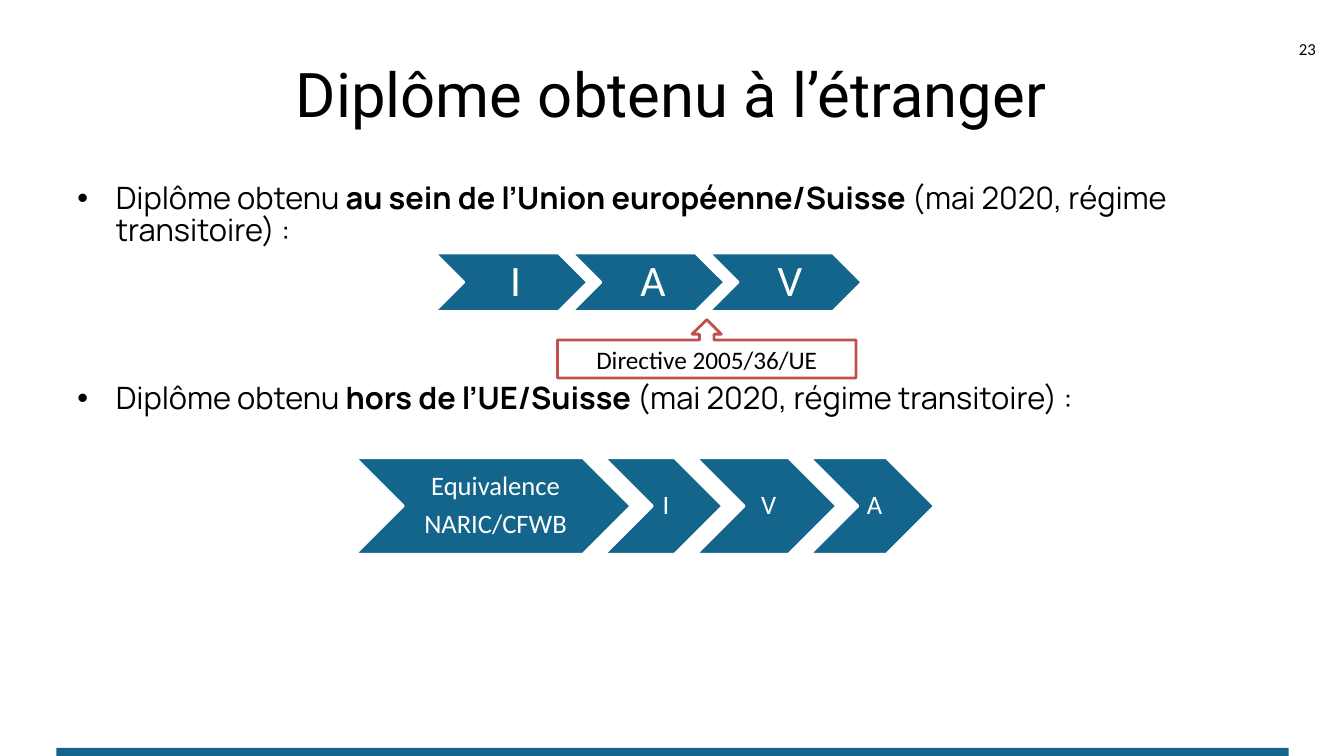
from pptx import Presentation
from pptx.dml.color import RGBColor
from pptx.enum import shapes, text
from pptx.oxml import parse_xml
from pptx.oxml.ns import nsdecls
from pptx.util import Inches, Pt

BLUE, RED, WHITE, BLACK = "14658C", "C0504D", "FFFFFF", "000000"
KIND = shapes.MSO_SHAPE
ALIGN = text.PP_ALIGN
MID = text.MSO_ANCHOR.MIDDLE


def color(code):
    return RGBColor.from_string(code)


def write(frame, paras, font, size, ink, pad=(0.1, 0.05, 0.1, 0.05), anchor=MID, **form):
    """Fill a frame; each paragraph is a list of (words, bold) runs."""
    frame.word_wrap = True
    frame.vertical_anchor = anchor
    for side, gap in zip(("left", "top", "right", "bottom"), pad):
        setattr(frame, f"margin_{side}", Inches(gap))
    for i, runs in enumerate(paras):
        para = frame.paragraphs[0] if i == 0 else frame.add_paragraph()
        for key, value in form.items():
            setattr(para, key, value)
        for words, bold in runs:
            run = para.add_run()
            run.text = words
            for key, value in {"name": font, "size": Pt(size), "bold": bold}.items():
                setattr(run.font, key, value)
            run.font.color.rgb = color(ink)


def label(slide, box, paras, font, size, **form):
    frame = slide.shapes.add_textbox(*map(Inches, box)).text_frame
    write(frame, paras, font, size, BLACK, **form)
    return frame


def block(slide, kind, box, fill=None, line=None):
    shape = slide.shapes.add_shape(kind, *map(Inches, box))
    shape.shadow.inherit = False
    if fill:
        shape.fill.solid()
        shape.fill.fore_color.rgb = color(fill)
    else:
        shape.fill.background()
    if line:
        shape.line.color.rgb = color(line)
        shape.line.width = Pt(2)
    else:
        shape.line.fill.background()
    return shape


def body(slide, box, items, gap):
    """Bulleted items, with room for a chevron row between them."""
    frame = label(slide, box, items, "Manrope", 22,
                  anchor=text.MSO_ANCHOR.TOP, line_spacing=0.88)
    for i, para in enumerate(frame.paragraphs):
        if i:
            para.space_before = Pt(gap)
        props = para._p.get_or_add_pPr()
        props.set("marL", str(Inches(0.38)))
        props.set("indent", str(-Inches(0.38)))
        for tag in (f'<a:buFont {nsdecls("a")} typeface="Arial"/>',
                    f'<a:buChar {nsdecls("a")} char="•"/>'):
            props.append(parse_xml(tag))


def chain(slide, left, top, high, lap, size, pad, steps):
    """Row of chevrons, each overlapping the one before by lap."""
    for wide, lines in steps:
        step = block(slide, KIND.CHEVRON, (left, top, wide, high), BLUE, WHITE)
        write(step.text_frame, [[(line, False)] for line in lines], "Calibri", size,
              WHITE, pad, alignment=ALIGN.CENTER, line_spacing=0.9,
              space_after=Pt(0.35 * size))
        left += wide - lap


def callout(slide, box, words):
    shape = block(slide, KIND.UP_ARROW_CALLOUT, box, line=RED)
    write(shape.text_frame, [[(words, False)]], "Calibri", 18, BLACK,
          alignment=ALIGN.CENTER)


def main():
    deck = Presentation()
    deck.slide_width, deck.slide_height = Inches(13.33), Inches(7.5)
    slide = deck.slides.add_slide(deck.slide_layouts[6])

    block(slide, KIND.RECTANGLE, (0.56, 7.42, 12.22, 0.08), BLUE)
    label(slide, (0.67, 0.3, 11.98, 1.25), [[("Diplôme obtenu à l’étranger", False)]],
          "Roboto", 44, alignment=ALIGN.CENTER)
    start, end = "Diplôme obtenu ", "(mai 2020, régime transitoire) :"
    places = ("au sein de l’Union européenne/Suisse ", "hors de l’UE/Suisse ")
    body(slide, (0.67, 1.77, 11.98, 4.93),
         [[(start, False), (place, True), (end, False)] for place in places], 96.5)

    callout(slide, (5.53, 3.17, 2.96, 0.58), "Directive 2005/36/UE")
    chain(slide, 4.31, 2.51, 0.58, 0.16, 31, (0.14, 0.05, 0.05, 0.05),
          [(1.52, [name]) for name in "IAV"])
    chain(slide, 3.52, 4.54, 0.96, 0.27, 19, (0.08, 0.03, 0.03, 0.03),
          [(2.74, ["Equivalence", "NARIC/CFWB"]), (1.18, ["I"]),
           (1.4, ["V"]), (1.24, ["A"])])

    label(slide, (12.4, 0.28, 0.75, 0.4), [[("23", False)]], "Calibri", 12,
          alignment=ALIGN.RIGHT)
    deck.save("out.pptx")


if __name__ == "__main__":
    main()
